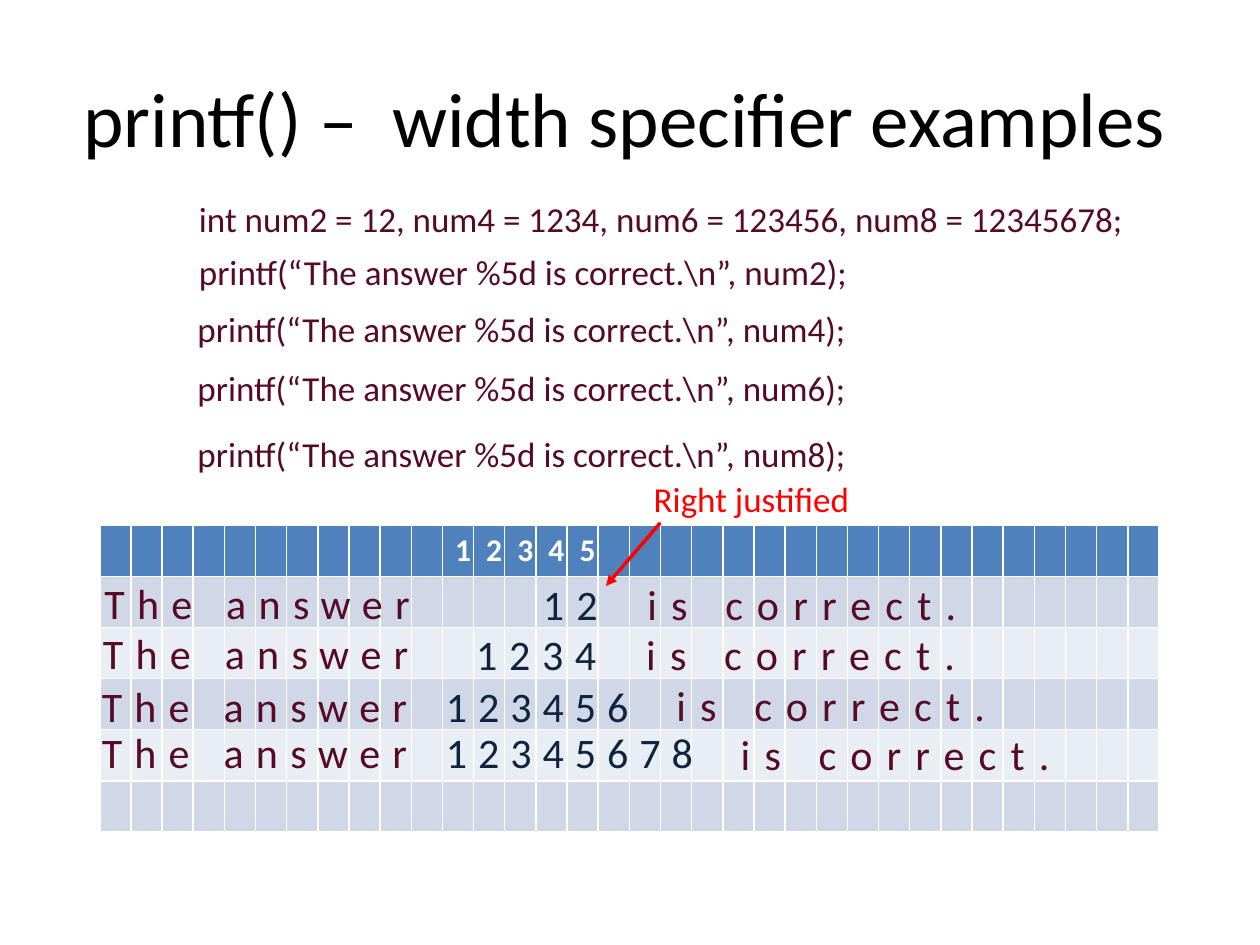
from pptx import Presentation
from pptx.dml.color import RGBColor
from pptx.enum.shapes import MSO_CONNECTOR as Connector
from pptx.enum.text import MSO_ANCHOR as Anchor, PP_ALIGN as Align
from pptx.oxml.ns import qn
from pptx.util import Pt
from lxml.etree import SubElement

MAROON, NAVY, RED = "560A25", "0F243E", "FF0000"
HEADER, BANDS = "4F81BD", ("E9EDF4", "D0D8E8")


def color(value):
    return RGBColor.from_string(value)


class Slide:
    font = "Calibri"

    def __init__(self, deck):
        self.page = deck.slides.add_slide(deck.slide_layouts[5])

    def add_span(self, para, text, size, fill, spacing=None, bold=None):
        """Add one run; spacing is the extra gap between letters in points."""
        span = para.add_run()
        span.text = text
        span.font.name = self.font
        span.font.size = Pt(size)
        span.font.bold = bold
        span.font.color.rgb = color(fill)
        if spacing:
            span.font._element.set("spc", str(round(spacing * 100)))

    def title(self, text, left, top, width, height):
        box = self.page.shapes.title
        box.left, box.top, box.width, box.height = map(Pt, (left, top, width, height))
        box.text_frame.vertical_anchor = Anchor.MIDDLE
        para = box.text_frame.paragraphs[0]
        para.alignment = Align.CENTER
        self.add_span(para, text, 44, "000000")

    def text(self, spans, left, top, width, height=32.4, size=20, fill=MAROON):
        """Add a text box from (text, letter spacing) pairs."""
        box = self.page.shapes.add_textbox(*map(Pt, (left, top, width, height)))
        box.text_frame.word_wrap = True
        para = box.text_frame.paragraphs[0]
        before = SubElement(para._p.get_or_add_pPr(), qn("a:spcBef"))
        SubElement(before, qn("a:spcPct"), val="20000")
        for text, spacing in spans:
            self.add_span(para, text, size, fill, spacing)

    def grid(self, rows, columns, left, top, width, height, headings):
        """Add a banded table; headings maps a column to its header text."""
        frame = self.page.shapes.add_table(rows, columns, *map(Pt, (left, top, width, height)))
        table = frame.table
        for column in table.columns:
            column.width = Pt(width / columns)
        for row in range(rows):
            for column in range(columns):
                cell = table.cell(row, column)
                cell.fill.solid()
                cell.fill.fore_color.rgb = color(BANDS[row % 2] if row else HEADER)
        for column, text in headings.items():
            para = table.cell(0, column).text_frame.paragraphs[0]
            self.add_span(para, text, 18, "FFFFFF", bold=True)

    def arrow(self, start, end, fill, weight):
        line = self.page.shapes.add_connector(Connector.STRAIGHT, *map(Pt, (*start, *end)))
        line.line.color.rgb = color(fill)
        line.line.width = Pt(weight)
        SubElement(line.line._get_or_add_ln(), qn("a:tailEnd"), type="triangle")
        SubElement(line._element.spPr, qn("a:effectLst"))


def main():
    deck = Presentation()
    deck.slide_width, deck.slide_height = Pt(720), Pt(540)
    slide = Slide(deck)
    slide.title("printf() –  width specifier examples", 12.2, 21.6, 689.8, 90)
    slide.grid(6, 34, 57, 300.2, 606.2, 175.2, {10 + n: str(n) for n in range(1, 6)})

    declaration = "int num2 = 12, num4 = 1234, num6 = 123456, num8 = 12345678;"
    slide.text([(declaration, None)], 106.6, 109.4, 545.8)
    calls = [("num2", 106.6, 139.7), ("num4", 105.8, 172.1),
             ("num6", 105.8, 205.9), ("num8", 105.8, 243.4)]
    for name, left, top in calls:
        call = f"printf(“The answer %5d is correct.\\n”, {name});"
        slide.text([(call, None)], left, top, 434.2)

    # Printed lines: label place, then number, spacing, place and width, then ending place
    outputs = [
        ((52.6, 326.2), "12", 7, (303.1, 326.9, 53.3), (362.9, 326.9)),
        ((51.8, 355), "1234", 6.7, (265, 355.7, 99.4), (362.2, 355.7)),
        ((51.1, 385.2), "123456", 6.3, (247.7, 385.2, 133.2), (379.4, 384.5)),
        ((51.1, 411.8), "12345678", 6.3, (247.7, 411.8, 166.3), (416.2, 412.6)),
    ]
    for label, number, spacing, place, ending in outputs:
        slide.text([("The an", 7), ("sw", 6.5), ("er", 7)], *label, 196.6, size=24)
        slide.text([(number, spacing)], *place, size=24, fill=NAVY)
        slide.text([("is correct.", 8.1)], *ending, 228.2, 27.4, size=24)

    slide.text([("Right justified", None)], 366.5, 269.3, 156.2, fill=RED)
    slide.arrow((377.3, 298.8), (346.3, 334.8), RED, 2)
    deck.save("out.pptx")


if __name__ == "__main__":
    main()
